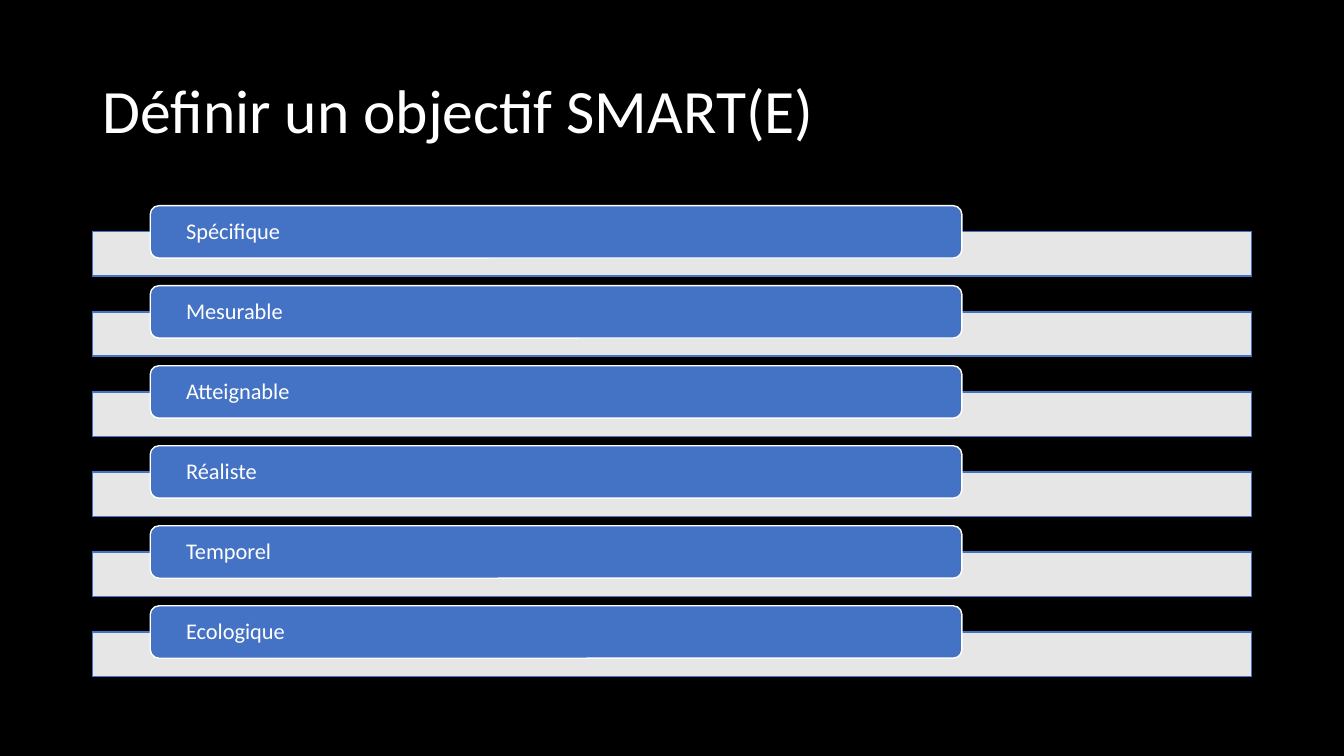
import pptx
import pptx.util
import pptx.dml.color
import pptx.enum.shapes
import pptx.enum.text
import lxml.etree
from dataclasses import dataclass

# Content
HEADING = "Définir un objectif SMART(E)"
CRITERIA = ["Spécifique", "Mesurable", "Atteignable", "Réaliste", "Temporel", "Ecologique"]


@dataclass(frozen=True)
class Theme:
    font: str = "Calibri"
    background: str = "000000"
    light: str = "FFFFFF"
    accent: str = "4472C4"
    heading_size: int = 44
    label_size: int = 16
    outline: int = 1
    bar_opacity: int = 90


THEME = Theme()

# Layout in inches
SLIDE_WIDTH, SLIDE_HEIGHT = 13.33, 7.5
CONTENT_WIDTH = 11.5
MARGIN = (SLIDE_WIDTH - CONTENT_WIDTH) / 2
HEADING_TOP, HEADING_HEIGHT = 0.4, 1.45
FIRST_BAR, LAST_BAR, BAR_HEIGHT = 2.3, 6.27, 0.44
ROW_PITCH = (LAST_BAR - FIRST_BAR) / (len(CRITERIA) - 1)
LABEL_INDENT = CONTENT_WIDTH * 0.05
LABEL_WIDTH = CONTENT_WIDTH * 0.7
LABEL_RISE, LABEL_HEIGHT, LABEL_INSET = 0.26, 0.52, 0.33

inches = pptx.util.Inches
SHAPES = pptx.enum.shapes.MSO_SHAPE


def rgb(code):
    return pptx.dml.color.RGBColor.from_string(code)


def write(frame, text, size):
    frame.word_wrap = True
    frame.vertical_anchor = pptx.enum.text.MSO_ANCHOR.MIDDLE
    paragraph = frame.paragraphs[0]
    paragraph.alignment = pptx.enum.text.PP_ALIGN.LEFT
    paragraph.line_spacing = 0.9
    run = paragraph.add_run()
    run.text = text
    run.font.name = THEME.font
    run.font.size = pptx.util.Pt(size)
    run.font.color.rgb = rgb(THEME.light)


def add_block(slide, kind, box, fill, line):
    block = slide.shapes.add_shape(kind, *map(inches, box))
    block.shadow.inherit = False
    block.fill.solid()
    block.fill.fore_color.rgb = rgb(fill)
    block.line.color.rgb = rgb(line)
    block.line.width = pptx.util.Pt(THEME.outline)
    return block


def set_opacity(block, percent):
    color = block.fill._xPr.find(".//" + pptx.oxml.ns.qn("a:srgbClr"))
    alpha = lxml.etree.SubElement(color, pptx.oxml.ns.qn("a:alpha"))
    alpha.set("val", str(percent * 1000))


def add_criterion(slide, row, criterion):
    top = FIRST_BAR + row * ROW_PITCH
    # Wide bar behind
    bar = add_block(slide, SHAPES.RECTANGLE, (MARGIN, top, CONTENT_WIDTH, BAR_HEIGHT),
                    THEME.light, THEME.accent)
    set_opacity(bar, THEME.bar_opacity)
    # Rounded label in front
    label = add_block(slide, SHAPES.ROUNDED_RECTANGLE,
                      (MARGIN + LABEL_INDENT, top - LABEL_RISE, LABEL_WIDTH, LABEL_HEIGHT),
                      THEME.accent, THEME.light)
    frame = label.text_frame
    frame.margin_left = frame.margin_right = inches(LABEL_INSET)
    frame.margin_top = frame.margin_bottom = 0
    write(frame, criterion, THEME.label_size)


def main():
    deck = pptx.Presentation()
    deck.slide_width, deck.slide_height = inches(SLIDE_WIDTH), inches(SLIDE_HEIGHT)
    slide = deck.slides.add_slide(deck.slide_layouts.get_by_name("Title Only"))
    slide.background.fill.solid()
    slide.background.fill.fore_color.rgb = rgb(THEME.background)

    # Heading
    heading = slide.shapes.title
    heading.left, heading.top = inches(MARGIN), inches(HEADING_TOP)
    heading.width, heading.height = inches(CONTENT_WIDTH), inches(HEADING_HEIGHT)
    write(heading.text_frame, HEADING, THEME.heading_size)

    # Criteria
    for row, criterion in enumerate(CRITERIA):
        add_criterion(slide, row, criterion)

    deck.save("out.pptx")


if __name__ == "__main__":
    main()
